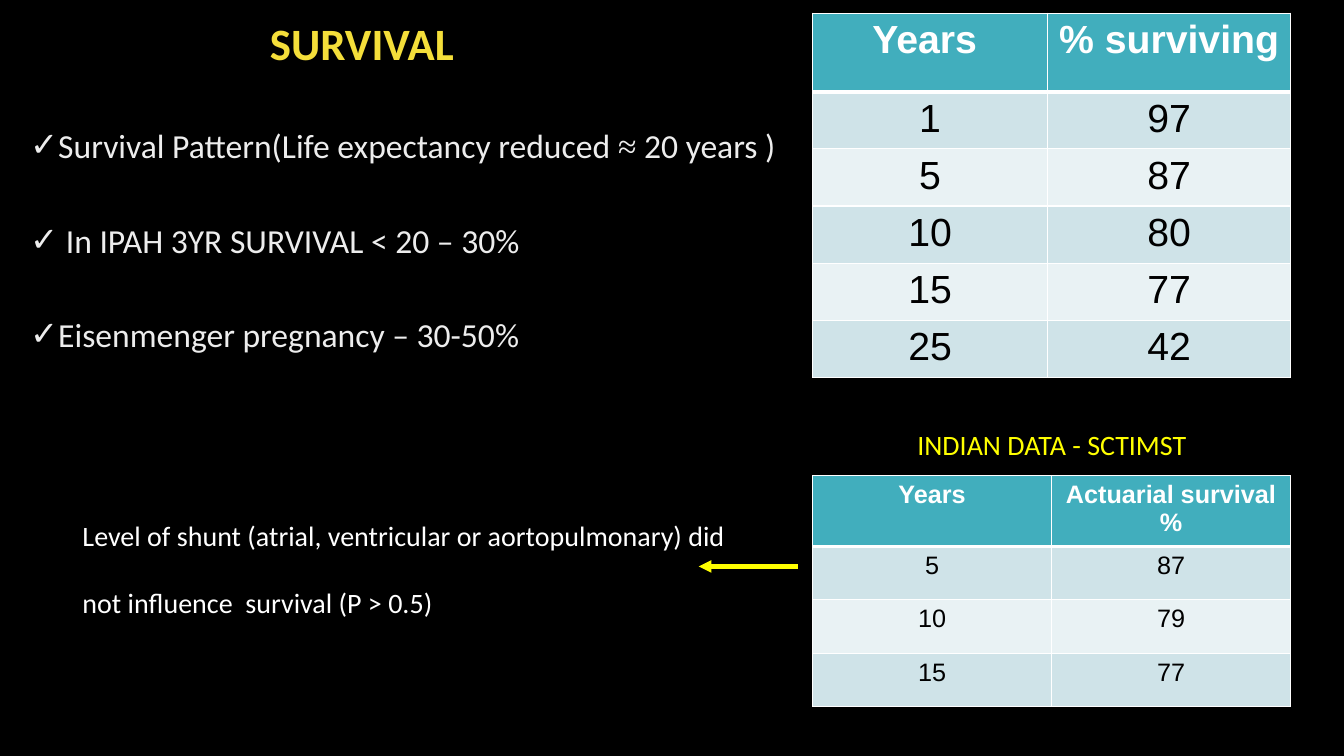
from lxml.etree import SubElement as Sub
from pptx import Presentation
from pptx.dml.color import RGBColor as RGB
from pptx.enum.shapes import MSO_CONNECTOR as Link
from pptx.enum.text import MSO_ANCHOR as Anchor, PP_ALIGN as Align
from pptx.oxml.ns import qn
from pptx.util import Pt

PX = 9144
BLACK = RGB(0, 0, 0)
WHITE = RGB(255, 255, 255)
PALE = RGB(0xED, 0xED, 0xED)
GOLD = RGB(0xF4, 0xDE, 0x3A)
YELLOW = RGB(255, 255, 0)
TEAL = RGB(0x41, 0xAE, 0xBD)
BANDS = RGB(0xCF, 0xE3, 0xE8), RGB(0xE9, 0xF2, 0xF4)


def scale(*sizes):
    return [size * PX for size in sizes]


def add_run(para, text, size, color, face="Calibri", bold=False):
    run = para.add_run()
    run.text = text
    font = run.font
    font.size, font.name, font.bold = Pt(size), face, bold
    font.color.rgb = color


def add_frame(slide, box):
    frame = slide.shapes.add_textbox(*scale(*box)).text_frame
    frame.word_wrap = True
    return frame


def add_title(slide, box):
    frame = add_frame(slide, box)
    frame.vertical_anchor = Anchor.MIDDLE
    para = frame.paragraphs[0]
    para.alignment, para.line_spacing = Align.CENTER, 0.9
    add_run(para, "SURVIVAL ", 32, GOLD, bold=True)


def add_points(slide, box, points):
    frame = add_frame(slide, box)
    for i, parts in enumerate(points):
        para = frame.add_paragraph() if i else frame.paragraphs[0]
        props = para._p.get_or_add_pPr()
        props.set("marL", str(25 * PX))
        props.set("indent", str(-25 * PX))
        Sub(props, qn("a:buFont"), typeface="Arial")
        Sub(props, qn("a:buChar"), char="✓")
        para.line_spacing = 2.0
        if i:
            para.space_before = Pt(10)
        for text, face in parts:
            add_run(para, text, 24, PALE, face)


def add_note(slide, box, text, color, space=1.0):
    para = add_frame(slide, box).paragraphs[0]
    para.line_spacing = space
    add_run(para, text, 20, color)


def add_edges(cell, head):
    props = cell._tc.get_or_add_tcPr()
    for side in "LRTB":
        width = 3 if head and side == "B" else 1
        line = Sub(props, qn("a:ln" + side), w=str(Pt(width)))
        fill = Sub(line, qn("a:solidFill"))
        Sub(fill, qn("a:srgbClr"), val=str(WHITE))


def add_grid(slide, box, cols, tops, rows, size):
    high = [tops] + [(box[3] - tops) // (len(rows) - 1)] * (len(rows) - 1)
    grid = slide.shapes.add_table(len(rows), len(cols), *scale(*box)).table
    grid.horz_banding = False
    for col, width in zip(grid.columns, scale(*cols)):
        col.width = width
    for i, row in enumerate(rows):
        grid.rows[i].height = high[i] * PX
        head = i == 0
        for j, text in enumerate(row):
            cell = grid.cell(i, j)
            add_edges(cell, head)
            cell.fill.solid()
            cell.fill.fore_color.rgb = TEAL if head else BANDS[(i - 1) % 2]
            para = cell.text_frame.paragraphs[0]
            para.alignment = Align.CENTER
            add_run(para, text, size, WHITE if head else BLACK, "Arial", head)


def add_arrow(slide, start, end):
    arrow = slide.shapes.add_connector(Link.STRAIGHT, *scale(*start, *end))
    arrow.line.color.rgb = YELLOW
    arrow.line.width = Pt(3)
    Sub(arrow.line._get_or_add_ln(), qn("a:tailEnd"), type="triangle")
    Sub(arrow._element.spPr, qn("a:effectLst"))


def main():
    deck = Presentation()
    deck.slide_width, deck.slide_height = scale(1333, 750)
    slide = deck.slides.add_slide(deck.slide_layouts[6])
    back = slide.background.fill
    back.solid()
    back.fore_color.rgb = BLACK

    add_title(slide, (76, 13, 576, 66))
    add_points(slide, (20, 79, 773, 466), [
        [("Survival Pattern(Life expectancy reduced ", "Calibri"),
         ("≈", "Times New Roman"), (" 20 years )", "Calibri")],
        [(" In IPAH 3YR SURVIVAL < 20 – 30%", "Calibri")],
        [("Eisenmenger pregnancy – 30-50%", "Calibri")],
    ])
    add_grid(slide, (806, 13, 474, 348), (233, 241), 78, [
        ("Years ", "% surviving"), ("1", "97"), ("5", "87"),
        ("10", "80"), ("15", "77"), ("25", "42"),
    ], 28)
    add_grid(slide, (806, 472, 474, 225), (237, 237), 66, [
        ("Years", "Actuarial survival %"),
        ("5", "87"), ("10", "79"), ("15", "77"),
    ], 18)
    add_note(slide, (900, 419, 351, 44), "INDIAN DATA - SCTIMST", YELLOW)
    add_note(slide, (72, 476, 670, 135),
             "Level of shunt (atrial, ventricular or aortopulmonary) did "
             "not influence  survival (P > 0.5)", WHITE, 2.0)
    add_arrow(slide, (791, 562), (693, 562))
    deck.save("out.pptx")


if __name__ == "__main__":
    main()
